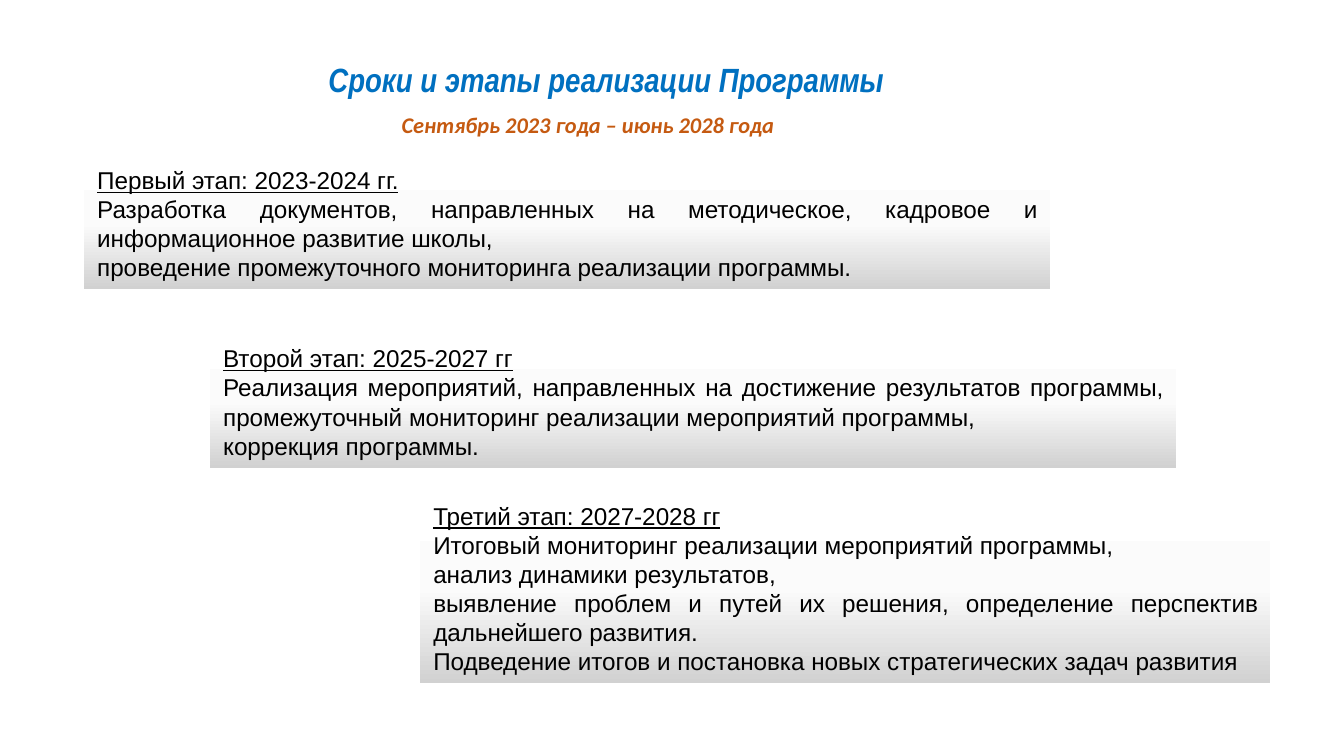
import copy

import pptx
import pptx.dml.color
import pptx.enum.shapes
import pptx.enum.text
import pptx.util

RGBColor = pptx.dml.color.RGBColor
Align = pptx.enum.text.PP_ALIGN
Anchor = pptx.enum.text.MSO_ANCHOR

BLUE = RGBColor(0x00, 0x70, 0xC0)
ORANGE = RGBColor(0xC5, 0x5A, 0x11)
BLACK = RGBColor(0x00, 0x00, 0x00)
GRADIENT = [
    (0, RGBColor(0xFF, 0xFF, 0xFF)),
    (0.5, RGBColor(0xFB, 0xFB, 0xFB)),
    (1, RGBColor(0xD1, 0xD1, 0xD1)),
]

SLIDE_WIDTH = pptx.util.Inches(10)
SLIDE_HEIGHT = SLIDE_WIDTH * 9 // 16
COLUMNS, ROWS = 32, 18

TITLE_FONT = {"name": "Arial Narrow", "size": pptx.util.Pt(18), "bold": True, "italic": True}
PERIOD_FONT = {"name": "Calibri", "size": pptx.util.Pt(12), "bold": True, "italic": True}
STAGE_FONT = {"name": "Arial", "size": pptx.util.Pt(13)}

STAGES = [
    ((10, 11.75, 20.25, 4.52), "Третий этап: 2027-2028 гг", [
        "Итоговый мониторинг реализации мероприятий программы, ",
        "анализ динамики результатов, ",
        "выявление проблем и путей их решения, определение перспектив дальнейшего развития. ",
        "Подведение итогов и постановка новых стратегических задач развития",
    ]),
    ((5, 8, 23, 3.14), "Второй этап: 2025-2027 гг", [
        "Реализация мероприятий, направленных на достижение результатов программы, "
        "промежуточный мониторинг реализации мероприятий программы, ",
        "коррекция программы.",
    ]),
    ((2, 3.75, 23, 3.14), "Первый этап: 2023-2024 гг.", [
        "Разработка документов, направленных на методическое, кадровое и "
        "информационное развитие школы, ",
        "проведение промежуточного мониторинга реализации программы.",
    ]),
]


def grid_box(column, row, columns, rows):
    """Turn grid units into left, top, width and height."""
    return (
        round(SLIDE_WIDTH * column / COLUMNS),
        round(SLIDE_HEIGHT * row / ROWS),
        round(SLIDE_WIDTH * columns / COLUMNS),
        round(SLIDE_HEIGHT * rows / ROWS),
    )


def write_lines(shape, lines, font_values, color, alignment, anchor, wrap):
    """Write one formatted paragraph per line and return the paragraphs."""
    frame = shape.text_frame
    frame.text = "\n".join(lines)
    frame.word_wrap = wrap
    frame.auto_size = pptx.enum.text.MSO_AUTO_SIZE.SHAPE_TO_FIT_TEXT
    frame.vertical_anchor = anchor
    for paragraph in frame.paragraphs:
        paragraph.alignment = alignment
        font = paragraph.runs[0].font
        for name, value in font_values.items():
            setattr(font, name, value)
        font.color.rgb = color
    return frame.paragraphs


def fill_gradient(shape):
    """Fill the shape from white at the top to grey at the bottom."""
    shape.fill.gradient()
    shape.fill.gradient_angle = 270
    stop_list = shape.fill._fill._gradFill.gsLst
    stop_list.append(copy.deepcopy(stop_list[-1]))
    for stop, (position, color) in zip(shape.fill.gradient_stops, GRADIENT):
        stop.position = position
        stop.color.rgb = color


def place_title(slide, box):
    """Place the slide title in its placeholder."""
    title = slide.shapes.title
    title.left, title.top, title.width, title.height = box
    write_lines(title, ["Сроки и этапы реализации Программы"], TITLE_FONT, BLUE,
                Align.LEFT, Anchor.TOP, False)


def add_period(slide, box):
    """Add the programme period under the title."""
    period = slide.shapes.add_textbox(*box)
    write_lines(period, ["Сентябрь 2023 года – июнь 2028 года"], PERIOD_FONT, ORANGE,
                Align.JUSTIFY, Anchor.TOP, False)


def add_stage(slide, box, heading, tasks):
    """Add a stage panel with an underlined heading and its tasks."""
    panel = slide.shapes.add_shape(pptx.enum.shapes.MSO_SHAPE.RECTANGLE, *box)
    panel.shadow.inherit = False
    panel.line.fill.background()
    fill_gradient(panel)
    paragraphs = write_lines(panel, [heading, *tasks], STAGE_FONT, BLACK,
                             Align.JUSTIFY, Anchor.MIDDLE, True)
    paragraphs[0].runs[0].font.underline = True


def main():
    """Build and save the presentation."""
    presentation = pptx.Presentation()
    presentation.slide_width = SLIDE_WIDTH
    presentation.slide_height = SLIDE_HEIGHT
    slide = presentation.slides.add_slide(presentation.slide_layouts.get_by_name("Title Only"))
    place_title(slide, grid_box(7.5, 1.25, 14, 1.28))
    for units, heading, tasks in STAGES:
        add_stage(slide, grid_box(*units), heading, tasks)
    add_period(slide, grid_box(9.25, 2.5, 9.63, 0.96))
    presentation.save("out.pptx")


if __name__ == "__main__":
    main()
